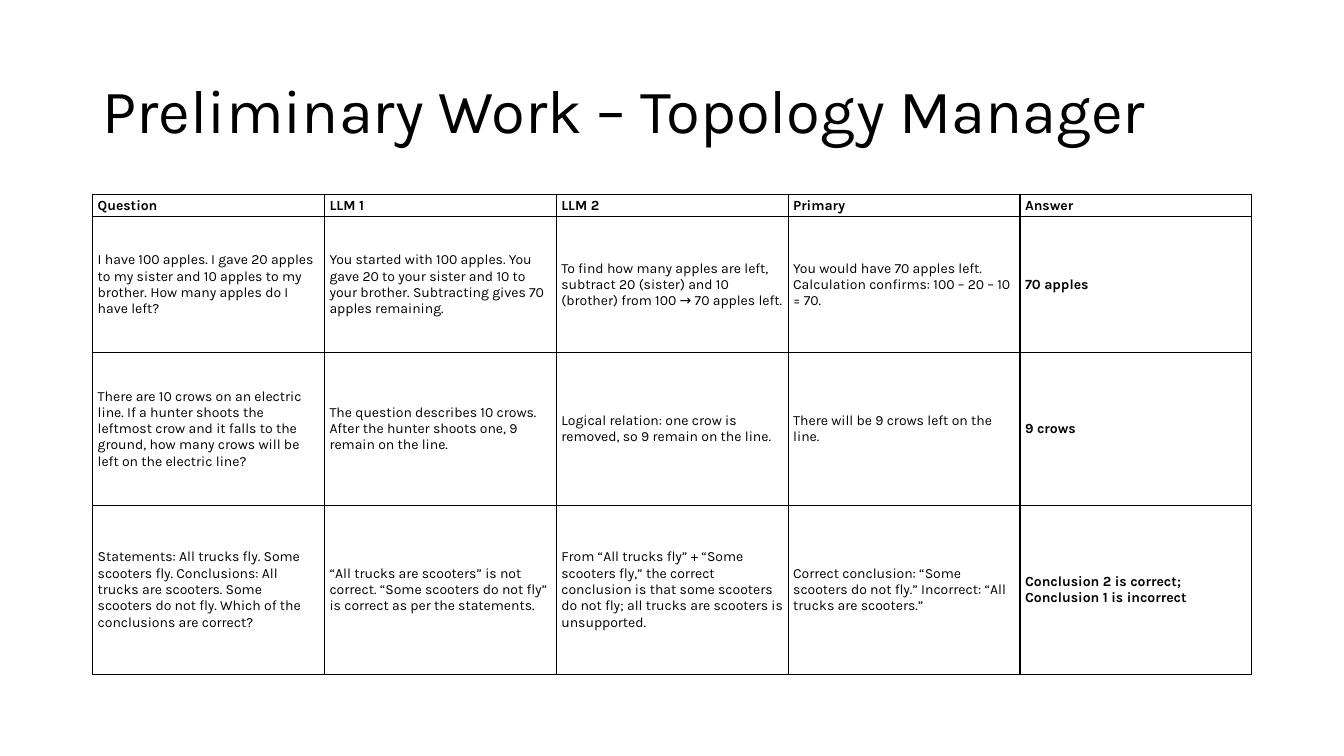
"""Build a slide with a table of questions, model replies and answers."""
from dataclasses import dataclass

from lxml import etree
from pptx import Presentation
from pptx.dml.color import RGBColor
from pptx.enum.text import MSO_ANCHOR
from pptx.oxml.ns import qn
from pptx.slide import Slide
from pptx.table import _Cell
from pptx.text.text import TextFrame
from pptx.util import Pt

MIDDLE = MSO_ANCHOR.MIDDLE
FONT = "Karla"
BLACK = "000000"
LEFT, WIDTH = 66.2, 828


@dataclass
class Row:
    height: float
    texts: list[str]
    head: bool = False


ROWS = [
    Row(15.6, ["Question", "LLM 1", "LLM 2", "Primary", "Answer"], True),
    Row(97.2, [
        "I have 100 apples. I gave 20 apples to my sister and 10 apples to my "
        "brother. How many apples do I have left?",
        "You started with 100 apples. You gave 20 to your sister and 10 to "
        "your brother. Subtracting gives 70 apples remaining.",
        "To find how many apples are left, subtract 20 (sister) and 10 "
        "(brother) from 100 → 70 apples left.",
        "You would have 70 apples left. Calculation confirms: "
        "100 – 20 – 10 = 70.",
        "70 apples",
    ]),
    Row(108.8, [
        "There are 10 crows on an electric line. If a hunter shoots the "
        "leftmost crow and it falls to the ground, how many crows will be "
        "left on the electric line?",
        "The question describes 10 crows. After the hunter shoots one, 9 "
        "remain on the line.",
        "Logical relation: one crow is removed, so 9 remain on the line.",
        "There will be 9 crows left on the line.",
        "9 crows",
    ]),
    Row(121, [
        "Statements: All trucks fly. Some scooters fly. Conclusions: All "
        "trucks are scooters. Some scooters do not fly. Which of the "
        "conclusions are correct?",
        "“All trucks are scooters” is not correct. “Some scooters do not "
        "fly” is correct as per the statements.",
        "From “All trucks fly” + “Some scooters fly,” the correct conclusion "
        "is that some scooters do not fly; all trucks are scooters is "
        "unsupported.",
        "Correct conclusion: “Some scooters do not fly.” Incorrect: “All "
        "trucks are scooters.”",
        "Conclusion 2 is correct; Conclusion 1 is incorrect",
    ]),
]


def color(code: str) -> RGBColor:
    """Turn a hex string into a colour."""
    return RGBColor.from_string(code)


def write(frame: TextFrame, text: str, size: float, bold: bool = False) -> None:
    """Set the text of a frame and format its run."""
    frame.text = text
    frame.word_wrap = True
    font = frame.paragraphs[0].runs[0].font
    font.name, font.size, font.bold = FONT, Pt(size), bold
    font.color.rgb = color(BLACK)


def border(cell: _Cell, width: float) -> None:
    """Draw a solid line on all four sides of a cell."""
    props = cell._tc.get_or_add_tcPr()
    for side in ("a:lnL", "a:lnR", "a:lnT", "a:lnB"):
        line = etree.SubElement(props, qn(side), w=str(Pt(width)))
        fill = etree.SubElement(line, qn("a:solidFill"))
        etree.SubElement(fill, qn("a:srgbClr"), val=BLACK)


def fill_cell(cell: _Cell, text: str, bold: bool) -> None:
    """Write and style one cell."""
    write(cell.text_frame, text, 10, bold)
    cell.vertical_anchor = MIDDLE
    cell.margin_left = cell.margin_right = Pt(3.6)
    cell.margin_top = cell.margin_bottom = Pt(1.8)
    border(cell, 1)
    cell.fill.background()


def add_title(slide: Slide, text: str) -> None:
    """Place the slide title."""
    box = slide.shapes.add_textbox(Pt(LEFT), Pt(28.8), Pt(WIDTH), Pt(104.4))
    frame = box.text_frame
    write(frame, text, 44)
    frame.vertical_anchor = MIDDLE
    frame.paragraphs[0].line_spacing = 0.9


def add_grid(slide: Slide, rows: list[Row]) -> None:
    """Place the table with equal columns."""
    count = len(rows[0].texts)
    height = sum(row.height for row in rows)
    table = slide.shapes.add_table(
        len(rows), count, Pt(LEFT), Pt(139.2), Pt(WIDTH), Pt(height)
    ).table
    table.horz_banding = False
    for col in table.columns:
        col.width = Pt(WIDTH / count)
    for i, row in enumerate(rows):
        table.rows[i].height = Pt(row.height)
        for j, text in enumerate(row.texts):
            fill_cell(table.cell(i, j), text, row.head or j == count - 1)


def main() -> None:
    """Build and save the deck."""
    deck = Presentation()
    deck.slide_width, deck.slide_height = Pt(960), Pt(540)
    slide = deck.slides.add_slide(deck.slide_layouts[6])
    add_title(slide, "Preliminary Work – Topology Manager")
    add_grid(slide, ROWS)
    deck.save("out.pptx")


if __name__ == "__main__":
    main()
